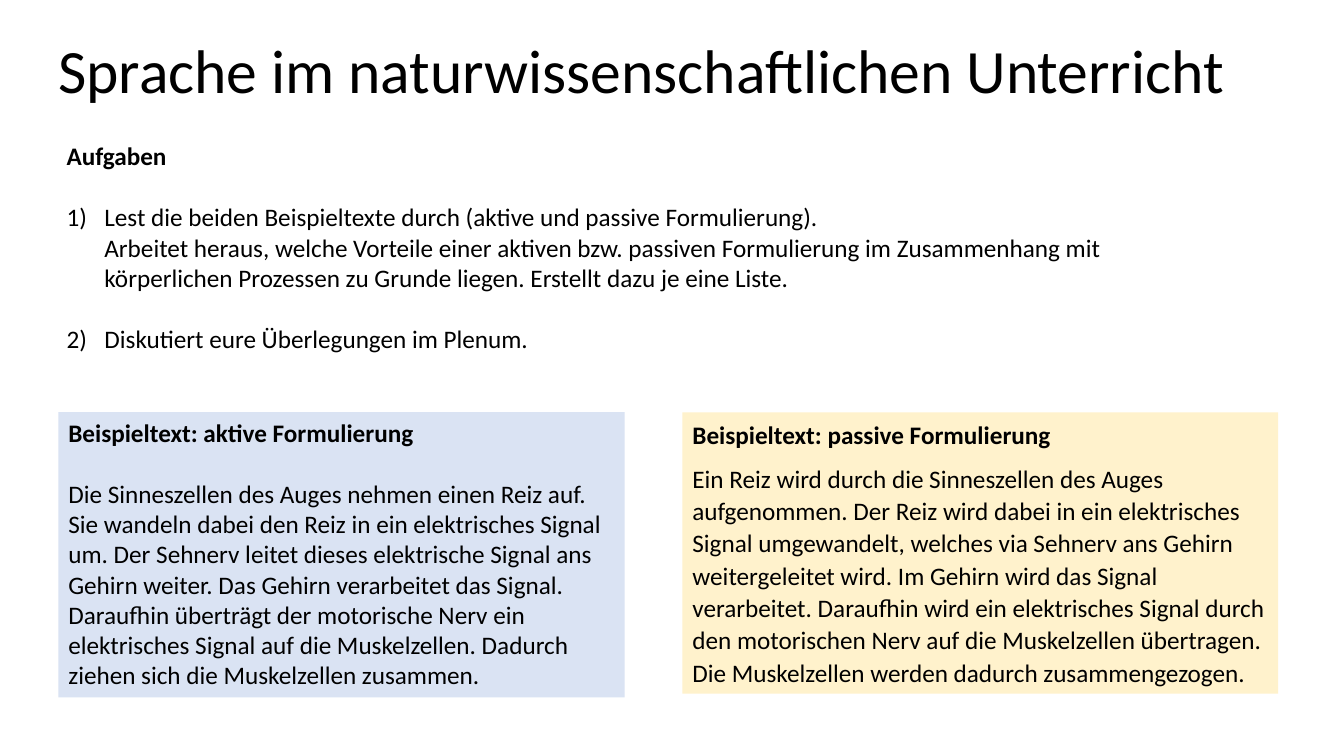
import pptx
import pptx.dml.color
import pptx.enum.shapes
import pptx.enum.text
import pptx.util
from lxml import etree

Pt = pptx.util.Pt
BLACK = "000000"
LINE = 22  # height of one 18 pt line, used as a gap

TASKS = [
    "Lest die beiden Beispieltexte durch (aktive und passive Formulierung). \n"
    "Arbeitet heraus, welche Vorteile einer aktiven bzw. passiven Formulierung "
    "im Zusammenhang mit körperlichen Prozessen zu Grunde liegen. "
    "Erstellt dazu je eine Liste.",
    "Diskutiert eure Überlegungen im Plenum.",
]
ACTIVE = (
    "Die Sinneszellen des Auges nehmen einen Reiz auf. Sie wandeln dabei den Reiz "
    "in ein elektrisches Signal um. Der Sehnerv leitet dieses elektrische Signal ans "
    "Gehirn weiter. Das Gehirn verarbeitet das Signal. Daraufhin überträgt der "
    "motorische Nerv ein elektrisches Signal auf die Muskelzellen. Dadurch ziehen "
    "sich die Muskelzellen zusammen."
)
PASSIVE = (
    "Ein Reiz wird durch die Sinneszellen des Auges aufgenommen. Der Reiz wird dabei "
    "in ein elektrisches Signal umgewandelt, welches via Sehnerv ans Gehirn "
    "weitergeleitet wird. Im Gehirn wird das Signal verarbeitet. Daraufhin wird ein "
    "elektrisches Signal durch den motorischen Nerv auf die Muskelzellen übertragen. "
    "Die Muskelzellen werden dadurch zusammengezogen."
)


def color(code):
    return pptx.dml.color.RGBColor.from_string(code)


def write(par, text, size=18, bold=False, gap=0, lead=1.0):
    """Fill a paragraph; gap is the space after it, lead its line spacing."""
    par.text = text
    par.alignment = pptx.enum.text.PP_ALIGN.LEFT
    par.space_after = Pt(gap)
    par.line_spacing = lead
    for run in par.runs:
        run.font.name = "Calibri"
        run.font.size = Pt(size)
        run.font.bold = bold
        run.font.color.rgb = color(BLACK)


def number(par):
    """Give a paragraph an automatic number, as in 1)."""
    props = par._p.get_or_add_pPr()
    props.set("marL", str(Pt(27)))
    props.set("indent", str(-Pt(27)))
    tag = pptx.oxml.ns.qn("a:buAutoNum")
    etree.SubElement(props, tag, type="arabicParenR")


def add_text(slide, left, top, width, height):
    box = slide.shapes.add_textbox(Pt(left), Pt(top), Pt(width), Pt(height))
    box.text_frame.word_wrap = True
    return box.text_frame


def add_title(slide, text):
    frame = add_text(slide, 34.5, 20, 860.5, 65.5)
    frame.vertical_anchor = pptx.enum.text.MSO_ANCHOR.MIDDLE
    write(frame.paragraphs[0], text, size=44, lead=0.9)


def add_tasks(slide, head, tasks):
    frame = add_text(slide, 40.5, 97, 769.5, 160)
    write(frame.paragraphs[0], head, bold=True, gap=LINE)
    for task in tasks:
        par = frame.add_paragraph()
        write(par, task, gap=LINE if task != tasks[-1] else 0)
        number(par)


def add_card(slide, left, width, height, fill, head, body, gap, lead):
    """Add a filled box with a bold heading over a sample text."""
    kind = pptx.enum.shapes.MSO_SHAPE.RECTANGLE
    card = slide.shapes.add_shape(kind, Pt(left), Pt(294.5), Pt(width), Pt(height))
    card.shadow.inherit = False
    card.fill.solid()
    card.fill.fore_color.rgb = color(fill)
    card.line.fill.background()
    frame = card.text_frame
    frame.word_wrap = True
    frame.vertical_anchor = pptx.enum.text.MSO_ANCHOR.TOP
    write(frame.paragraphs[0], head, bold=True, gap=gap, lead=lead)
    write(frame.add_paragraph(), body, lead=lead)


def main():
    deck = pptx.Presentation()
    deck.slide_width, deck.slide_height = Pt(960), Pt(540)
    slide = deck.slides.add_slide(deck.slide_layouts[6])
    add_title(slide, "Sprache im naturwissenschaftlichen Unterricht")
    add_tasks(slide, "Aufgaben", TASKS)
    add_card(slide, 487.5, 425.5, 201, "FFF2CC",
             "Beispieltext: passive Formulierung", PASSIVE, gap=8, lead=1.07)
    add_card(slide, 41.75, 404.5, 203.75, "DAE3F3",
             "Beispieltext: aktive Formulierung", ACTIVE, gap=LINE, lead=1.0)
    deck.save("out.pptx")


if __name__ == "__main__":
    main()
